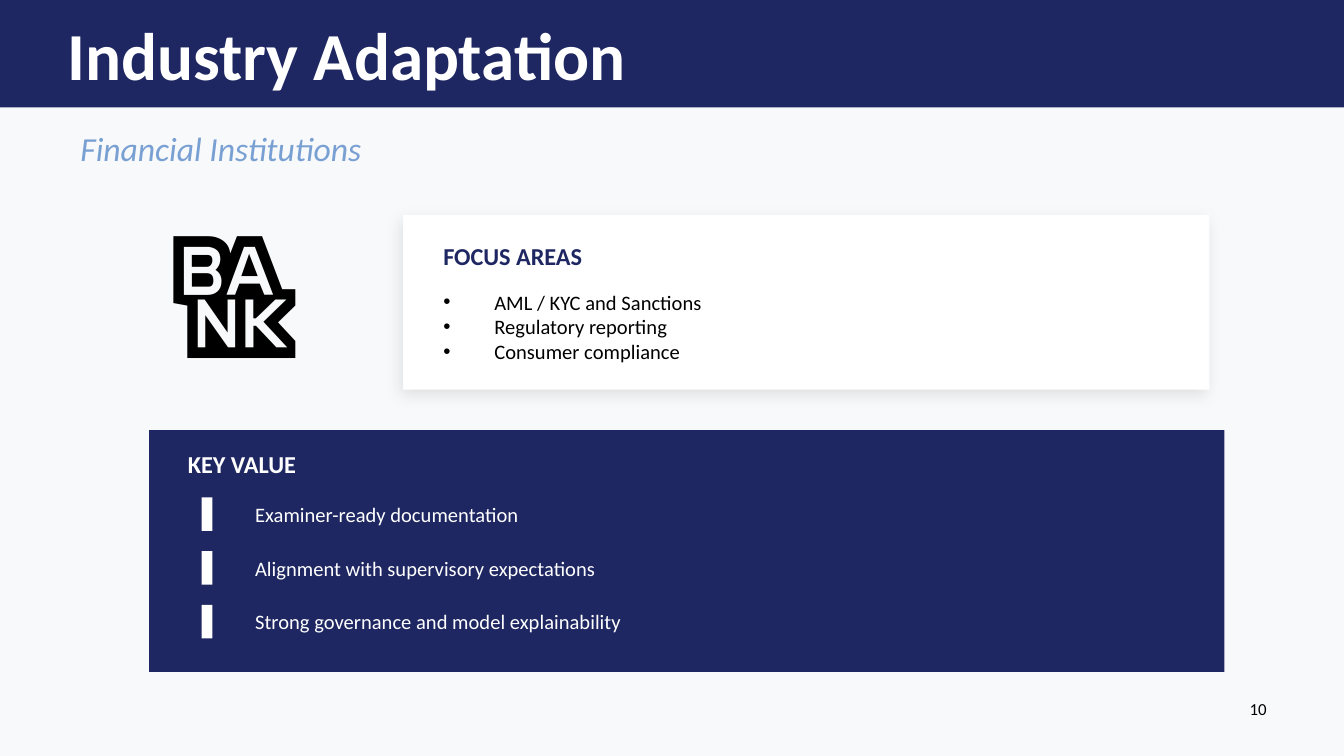
from lxml import etree
from pptx import Presentation
from pptx.dml.color import RGBColor
from pptx.enum.shapes import MSO_SHAPE as Shape
from pptx.enum.text import MSO_ANCHOR as Anchor, PP_ALIGN as Align
from pptx.oxml import parse_xml
from pptx.oxml.ns import nsdecls, qn
from pptx.util import Inches, Pt

NAVY, WHITE, BLACK = "1E2761", "FFFFFF", "000000"
SKY, PALE = "79A0D3", "F8F9FA"


def paint(fill, color):
    fill.solid()
    fill.fore_color.rgb = RGBColor.from_string(color)


def add_rect(slide, x, y, w, h, color):
    rect = slide.shapes.add_shape(
        Shape.RECTANGLE, Inches(x), Inches(y), Inches(w), Inches(h))
    paint(rect.fill, color)
    rect.line.fill.background()
    rect.shadow.inherit = False
    return rect


def add_shadow(shape):
    props = shape._element.spPr
    props.remove(props.find(qn("a:effectLst")))
    props.append(parse_xml(
        f'<a:effectLst {nsdecls("a")}>'
        f'<a:outerShdw blurRad="{Pt(8)}" dist="{Pt(3)}" dir="{135 * 60000}"'
        ' algn="bl" rotWithShape="0"><a:srgbClr val="000000">'
        '<a:alpha val="10000"/></a:srgbClr></a:outerShdw></a:effectLst>'))


def add_bullet(para):
    props = para._p.get_or_add_pPr()
    props.set("marL", str(Inches(0.38)))
    props.set("indent", str(-Inches(0.38)))
    etree.SubElement(props, qn("a:buSzPct")).set("val", "100000")
    etree.SubElement(props, qn("a:buFont")).set("typeface", "Arial")
    etree.SubElement(props, qn("a:buChar")).set("char", "•")


def add_text(slide, x, y, w, h, text, size, color, bold=False, italic=False,
             bullets=False, align=Align.LEFT, anchor=Anchor.MIDDLE):
    box = slide.shapes.add_textbox(
        Inches(x), Inches(y), Inches(w), Inches(h))
    frame = box.text_frame
    frame.word_wrap = True
    frame.vertical_anchor = anchor
    frame.text = text
    for para in frame.paragraphs:
        para.alignment = align
        if bullets:
            add_bullet(para)
        for run in para.runs:
            font = run.font
            font.name = "Calibri"
            font.size = Pt(size)
            font.bold = bold
            font.italic = italic
            font.color.rgb = RGBColor.from_string(color)
    return frame


def add_header(slide):
    add_rect(slide, 0, 0, 10, 0.8, NAVY)
    title = add_text(slide, 0.5, 0.2, 9, 0.4, "Industry Adaptation", 36,
                     WHITE, bold=True)
    title.margin_left = title.margin_right = 0
    title.margin_top = title.margin_bottom = 0
    add_text(slide, 0.5, 0.95, 9, 0.3, "Financial Institutions", 18, SKY,
             italic=True)


def add_focus(slide, areas):
    add_text(slide, 1, 1.6, 1.5, 1, "🏦", 72, BLACK, align=Align.CENTER)
    add_shadow(add_rect(slide, 3, 1.6, 6, 1.3, WHITE))
    add_text(slide, 3.2, 1.75, 5.6, 0.3, "FOCUS AREAS", 13, NAVY, bold=True)
    add_text(slide, 3.2, 2.13, 5.6, 0.6, "\n".join(areas), 11, BLACK,
             bullets=True)


def add_values(slide, values):
    add_rect(slide, 1.11, 3.2, 8, 1.8, NAVY)
    add_text(slide, 1.3, 3.3, 7.4, 0.3, "KEY VALUE", 13, WHITE, bold=True)
    for row, value in enumerate(values):
        top = 3.7 + 0.4 * row
        add_rect(slide, 1.5, top, 0.08, 0.25, WHITE)
        add_text(slide, 1.8, top, 6.9, 0.25, value, 11, WHITE)


def main():
    deck = Presentation()
    deck.slide_width = Inches(10)
    deck.slide_height = Inches(10) * 9 // 16
    slide = deck.slides.add_slide(deck.slide_layouts[6])
    paint(slide.background.fill, PALE)

    # Title band and subtitle
    add_header(slide)

    # Icon and focus card
    add_focus(slide, ["AML / KYC and Sanctions", "Regulatory reporting",
                      "Consumer compliance"])

    # Key value panel
    add_values(slide, ["Examiner-ready documentation",
                       "Alignment with supervisory expectations",
                       "Strong governance and model explainability"])

    # Page number
    add_text(slide, 9.2, 5.15, 0.47, 0.35, "10", 9, BLACK, anchor=Anchor.TOP)

    deck.save("out.pptx")


if __name__ == "__main__":
    main()
